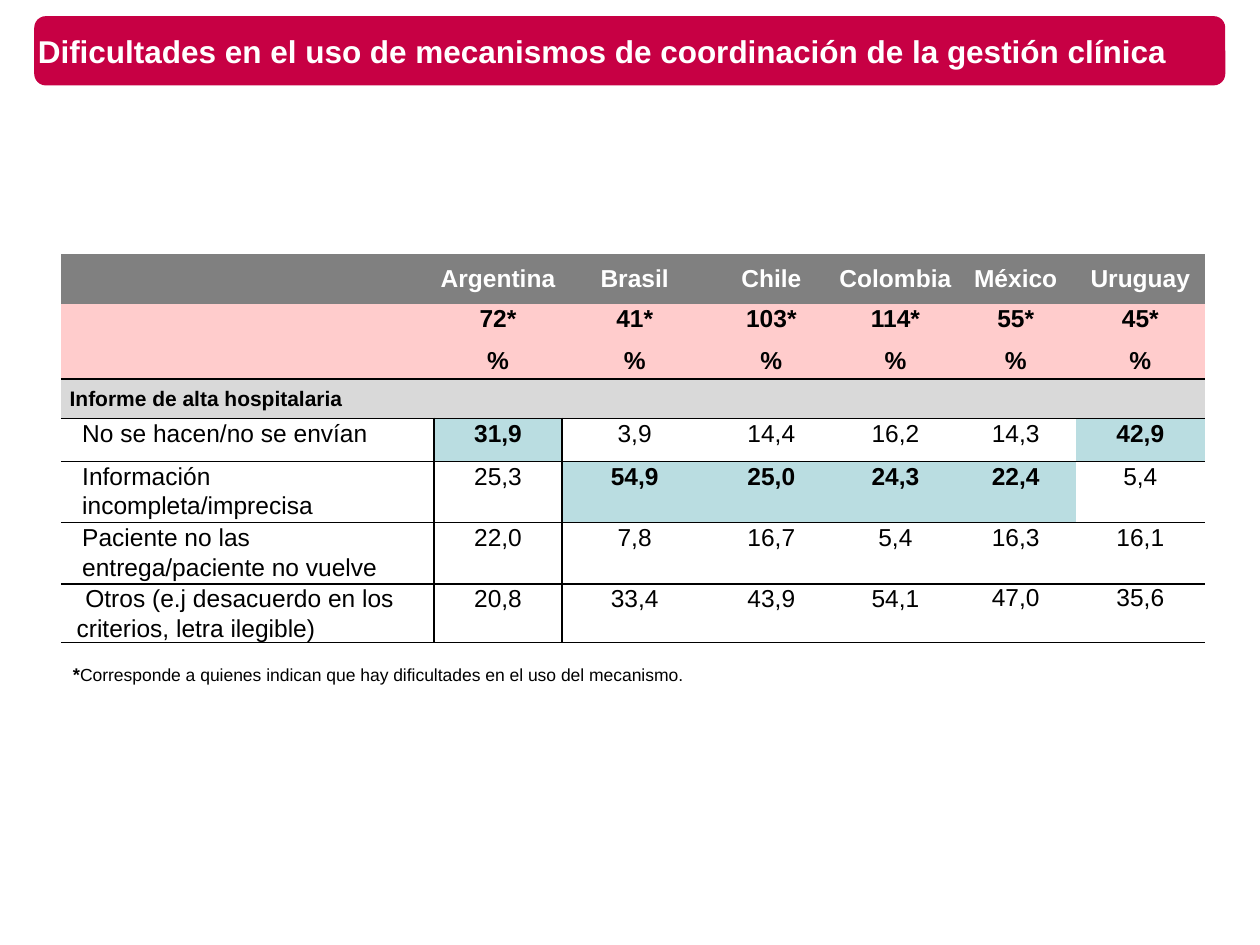
from lxml.etree import SubElement
from pptx import Presentation
from pptx.dml.color import RGBColor
from pptx.enum.shapes import MSO_SHAPE
from pptx.enum.text import MSO_ANCHOR, MSO_AUTO_SIZE, PP_ALIGN
from pptx.oxml.ns import qn
from pptx.util import Pt

# Content
TITLE = "Dificultades en el uso de mecanismos de coordinación de la gestión clínica"
NOTE = "Corresponde a quienes indican que hay dificultades en el uso del mecanismo."
ROWS = [
    ["", "Argentina", "Brasil", "Chile", "Colombia", "México", "Uruguay"],
    ["", "72*", "41*", "103*", "114*", "55*", "45*"],
    [""] + ["%"] * 6,
    ["Informe de alta hospitalaria"] + [""] * 6,
    ["No se hacen/no se envían", "31,9", "3,9", "14,4", "16,2", "14,3", "42,9"],
    ["Información incompleta/imprecisa", "25,3", "54,9", "25,0", "24,3", "22,4", "5,4"],
    ["Paciente no las entrega/paciente no vuelve",
     "22,0", "7,8", "16,7", "5,4", "16,3", "16,1"],
    ["Otros (e.j desacuerdo en los criterios, letra ilegible)",
     "20,8", "33,4", "43,9", "54,1", "47,0", "35,6"],
]
SECTION, FIRST_DATA = 3, 4
HIGHLIGHTS = {(4, 1), (4, 6), (5, 2), (5, 3), (5, 4), (5, 5)}
SINGLE_SPACED = {(7, 5), (7, 6)}

# Layout and colours
COL_WIDTHS = [213.1, 73.4, 82.8, 73.4, 68.4, 69.1, 73.4]
ROW_HEIGHTS = [28.4, 22, 20.9, 22.6, 24.6, 35, 35, 33.6]
HEAD_FILLS = ["808080", "FFCCCC", "FFCCCC", "D9D9D9"]
BLACK, WHITE, RED, TEAL = "000000", "FFFFFF", "C70044", "BADDE1"


def color(code):
    return RGBColor.from_string(code)


def set_attrs(obj, **values):
    for name, value in values.items():
        setattr(obj, name, value)


def add_run(p, text, size, bold, code=BLACK):
    r = p.add_run()
    r.text = text
    set_attrs(r.font, name="Arial", size=Pt(size), bold=bold)
    r.font.color.rgb = color(code)


def add_border(cell, side):
    ln = SubElement(cell._tc.get_or_add_tcPr(), qn(f"a:{side}"), w=str(Pt(1)))
    SubElement(SubElement(ln, qn("a:solidFill")), qn("a:srgbClr"), val=BLACK)


def format_cell(cell, row, col, text):
    # Borders come before the fill in the cell properties
    sides = {
        "lnL": row >= FIRST_DATA and col == 1,
        "lnR": row >= FIRST_DATA and col == 0,
        "lnT": row >= SECTION,
        "lnB": row >= SECTION - 1,
    }
    for side, shown in sides.items():
        if shown:
            add_border(cell, side)
    marked = (row, col) in HIGHLIGHTS
    fill = HEAD_FILLS[row] if row < FIRST_DATA else TEAL if marked else WHITE
    cell.fill.solid()
    cell.fill.fore_color.rgb = color(fill)

    compact = row in (0, 2)
    side_margin = Pt(0.7 if compact else 5)
    set_attrs(cell, margin_left=side_margin, margin_right=side_margin,
              margin_top=Pt(0), margin_bottom=Pt(0),
              vertical_anchor=MSO_ANCHOR.MIDDLE if compact or row == SECTION
              else MSO_ANCHOR.TOP)
    p = cell.text_frame.paragraphs[0]
    p.alignment = PP_ALIGN.CENTER if col else PP_ALIGN.LEFT
    if not compact and (row, col) not in SINGLE_SPACED:
        p.line_spacing = 1.07
    if row >= FIRST_DATA and col == 0:
        last = row == len(ROWS) - 1
        p._p.get_or_add_pPr().set("marL", str(Pt(4 if last else 7.2)))
        p._p.get_or_add_pPr().set("indent", str(Pt(5 if last else 0)))
    if text:
        add_run(p, text, 12 if row == SECTION else 14,
                row < FIRST_DATA or marked, BLACK if row else WHITE)
    else:
        SubElement(p._p, qn("a:endParaRPr"), sz="1200")


prs = Presentation()
set_attrs(prs, slide_width=Pt(720), slide_height=Pt(540))
s = prs.slides.add_slide(prs.slide_layouts[5])

# Title over its banner
banner = s.shapes.add_shape(MSO_SHAPE.ROUNDED_RECTANGLE,
                            Pt(19.6), Pt(9.2), Pt(680.6), Pt(39.6))
banner.adjustments[0] = 0.167
banner.shadow.inherit = False
banner.fill.solid()
banner.fill.fore_color.rgb = color(RED)
banner.line.fill.background()
title = s.shapes.title
title._element.addprevious(banner._element)
set_attrs(title, left=Pt(14.4), top=Pt(9.4), width=Pt(711), height=Pt(39.6))
tf = title.text_frame
set_attrs(tf, word_wrap=True, auto_size=MSO_AUTO_SIZE.NONE,
          vertical_anchor=MSO_ANCHOR.MIDDLE)
tf.paragraphs[0].alignment = PP_ALIGN.LEFT
add_run(tf.paragraphs[0], TITLE, 18, True, WHITE)

# Table
frame = s.shapes.add_table(len(ROWS), len(COL_WIDTHS), Pt(34.8), Pt(145.2),
                           Pt(sum(COL_WIDTHS)), Pt(sum(ROW_HEIGHTS)))
table = frame.table
set_attrs(table, first_row=False, horz_banding=False)
style = table._tbl.tblPr.find(qn("a:tableStyleId"))
style.text = "{2D5ABB26-0587-4C30-8999-92F81FD0307C}"  # no style, no grid
for column, width in zip(table.columns, COL_WIDTHS):
    column.width = Pt(width)
for row, height in zip(table.rows, ROW_HEIGHTS):
    row.height = Pt(height)
for i, texts in enumerate(ROWS):
    for j, text in enumerate(texts):
        format_cell(table.cell(i, j), i, j, text)
table.cell(SECTION, 0).merge(table.cell(SECTION, len(COL_WIDTHS) - 1))

# Footnote
note = s.shapes.add_textbox(Pt(34.6), Pt(372.4), Pt(685.4), Pt(25.9))
tf = note.text_frame
set_attrs(tf, word_wrap=True, vertical_anchor=MSO_ANCHOR.MIDDLE)
add_run(tf.paragraphs[0], "*", 10.5, True)
add_run(tf.paragraphs[0], NOTE, 10, False)

prs.save("out.pptx")
